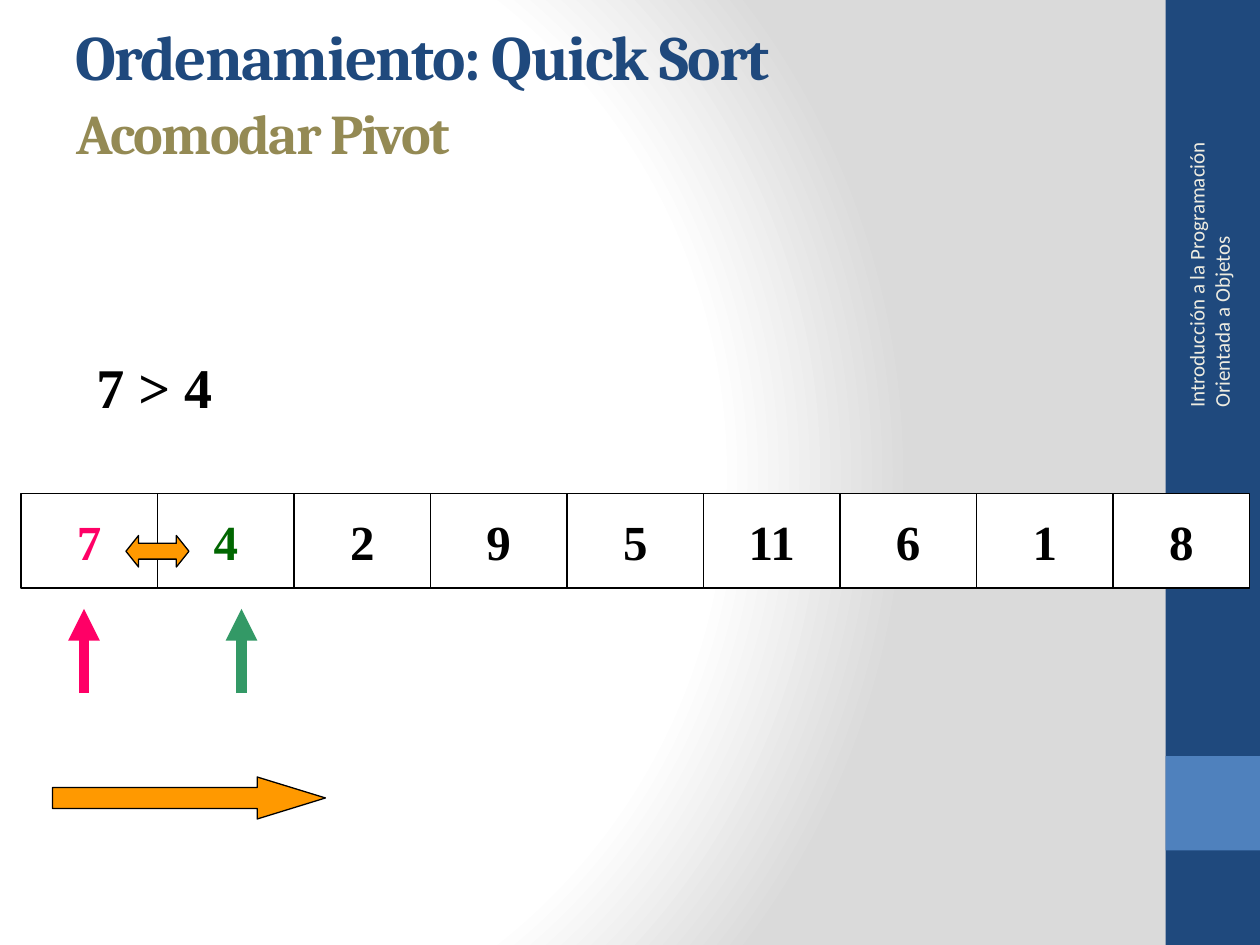
from lxml import etree
from pptx import Presentation
from pptx.dml.color import RGBColor
from pptx.enum.shapes import MSO_CONNECTOR, MSO_SHAPE
from pptx.enum.text import MSO_ANCHOR, MSO_AUTO_SIZE, PP_ALIGN
from pptx.oxml import parse_xml
from pptx.oxml.ns import qn
from pptx.util import Pt

RECT = MSO_SHAPE.RECTANGLE
RIGHT_ARROW = MSO_SHAPE.RIGHT_ARROW
SWAP_ARROW = MSO_SHAPE.LEFT_RIGHT_ARROW
STRAIGHT = MSO_CONNECTOR.STRAIGHT
TOP, MIDDLE = MSO_ANCHOR.TOP, MSO_ANCHOR.MIDDLE
LEFT, CENTER = PP_ALIGN.LEFT, PP_ALIGN.CENTER
NO_FIT = MSO_AUTO_SIZE.NONE
NAVY, BLUE, OLIVE, CREAM = "1F497D", "4F81BD", "948A54", "EEECE1"
BLACK, WHITE, ORANGE = "000000", "FFFFFF", "FF9900"
PINK, GREEN, TEAL = "FF0066", "006600", "339966"
STOPS = [(0, WHITE), (75, WHITE), (100, "DADADA")]
VALUES = [7, 4, 2, 9, 5, 11, 6, 1, 8]
VALUE_COLORS = {7: PINK, 4: GREEN}


def rgb(value):
    """Return the colour for a hex string."""
    return RGBColor.from_string(value)


def write(tf, text, font, size, color, bold=True, align=LEFT, anchor=TOP,
          wrap=True, spacing=None):
    """Fill a text frame with one formatted run."""
    tf.auto_size, tf.word_wrap, tf.vertical_anchor = NO_FIT, wrap, anchor
    p = tf.paragraphs[0]
    p.alignment = align
    r = p.add_run()
    r.text = text
    r.font.name, r.font.size, r.font.bold = font, Pt(size), bold
    r.font.color.rgb = rgb(color)
    if spacing is not None:
        r.font._element.set("spc", str(spacing * 100))


class SlideBuilder:
    """Hold the style and the slide being drawn."""

    heading_font, value_font, side_font = "Cambria", "Times New Roman", "Calibri"
    line_width, pointer_width = 0.75, 6

    def __init__(self, s):
        """Keep the slide to draw on."""
        self.s = s

    def background(self, stops, rect):
        """Paint a circular gradient behind the slide."""
        self.s.background.fill.solid()
        bg_pr = self.s._element.cSld.bg.bgPr
        gs = "".join(f'<a:gs pos="{pos * 1000}"><a:srgbClr val="{color}"/></a:gs>'
                     for pos, color in stops)
        sides = " ".join(f'{side}="{v * 1000}"' for side, v in zip("ltrb", rect))
        ns = "http://schemas.openxmlformats.org/drawingml/2006/main"
        grad = parse_xml(f'<a:gradFill xmlns:a="{ns}" rotWithShape="1">'
                         f'<a:gsLst>{gs}</a:gsLst><a:path path="circle">'
                         f'<a:fillToRect {sides}/></a:path></a:gradFill>')
        bg_pr.replace(bg_pr[0], grad)

    def title(self, text, x, y, w, h):
        """Place and format the title placeholder."""
        sp = self.s.shapes.title
        sp.left, sp.top, sp.width, sp.height = map(Pt, (x, y, w, h))
        write(sp.text_frame, text, self.heading_font, 36, NAVY, spacing=-1)

    def text(self, text, x, y, w, h, font, size, color, rotation=0, **fmt):
        """Add a text box."""
        sp = self.s.shapes.add_textbox(*map(Pt, (x, y, w, h)))
        sp.rotation = rotation
        write(sp.text_frame, text, font, size, color, **fmt)

    def shape(self, kind, x, y, w, h, fill, line=None, adjustments=()):
        """Add a filled preset shape."""
        sp = self.s.shapes.add_shape(kind, *map(Pt, (x, y, w, h)))
        sp.shadow.inherit = False
        sp.fill.solid()
        sp.fill.fore_color.rgb = rgb(fill)
        if line:
            sp.line.color.rgb = rgb(line)
            sp.line.width = Pt(self.line_width)
        else:
            sp.line.fill.background()
        for i, value in enumerate(adjustments):
            sp.adjustments[i] = value
        return sp

    def cells(self, values, x, y, w, h):
        """Add a row of bordered array cells."""
        for i, value in enumerate(values):
            sp = self.shape(RECT, x + i * w, y, w, h, WHITE, BLACK)
            write(sp.text_frame, str(value), self.value_font, 28,
                  VALUE_COLORS.get(value, BLACK), align=CENTER, anchor=MIDDLE,
                  wrap=False)

    def pointer(self, x, bottom, top, color):
        """Add a thick line with an arrowhead pointing up."""
        sp = self.s.shapes.add_connector(STRAIGHT, *map(Pt, (x, bottom, x, top)))
        sp.line.color.rgb = rgb(color)
        sp.line.width = Pt(self.pointer_width)
        etree.SubElement(sp.line._get_or_add_ln(), qn("a:tailEnd"), type="triangle")
        etree.SubElement(sp._element.spPr, qn("a:effectLst"))


def main():
    """Build the slide and save it."""
    prs = Presentation()
    prs.slide_width, prs.slide_height = Pt(720), Pt(540)
    b = SlideBuilder(prs.slides.add_slide(prs.slide_layouts[5]))
    b.background(STOPS, (20, 50, 100, 50))
    b.shape(RECT, 666, 0, 54, 540, NAVY)
    b.shape(RECT, 666, 432, 54, 54, BLUE)
    b.text("Introducción a la Programación Orientada a Objetos", 594.75, 129.6, 192,
           28.8, b.side_font, 12, CREAM, rotation=270, bold=False, anchor=MIDDLE)
    b.title("Ordenamiento: Quick Sort", 36, 6.5, 646.5, 47.5)
    b.text("Acomodar Pivot", 36.75, 52.5, 646.5, 47.5, b.heading_font, 32, OLIVE,
           spacing=-1)
    b.text("7 > 4", 48, 198, 138, 45.5, b.value_font, 32, BLACK)
    b.cells(VALUES, 12, 282, 78, 54)
    b.shape(SWAP_ARROW, 72, 306, 36, 18, ORANGE, BLACK, (0.5, 0.4))
    for x, color in ((48, PINK), (138, TEAL)):
        b.pointer(x, 396, 348, color)
    b.shape(RIGHT_ARROW, 30, 444, 156, 24, ORANGE, BLACK, (0.5, 1.625))
    prs.save("out.pptx")


if __name__ == "__main__":
    main()
